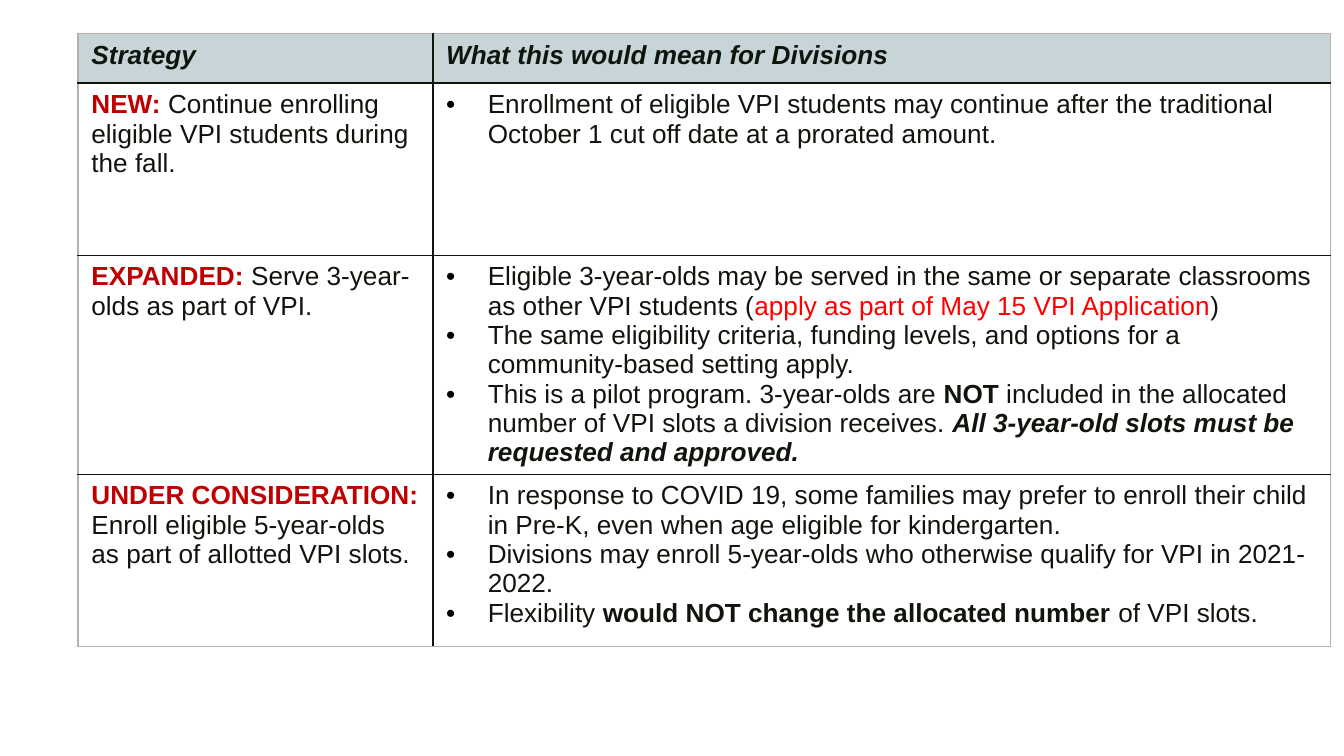
from lxml import etree
from pptx import Presentation
from pptx.dml.color import RGBColor
from pptx.oxml.ns import qn
from pptx.util import Inches, Pt

COLORS = {"ink": "0F150D", "label": "C00000", "alert": "FF0000", "header": "C7D4D8",
          "body": "FFFFFF", "bullet": "000000", "outline": "B2B2B2"}

# Each run is (text, style); style words: bold, italic, or a colour name
HEADINGS = ["Strategy", "What this would mean for Divisions"]
STRATEGIES = [
    ("NEW: ", "Continue enrolling eligible VPI students during the fall.", [
        [("Enrollment of eligible VPI students may continue after the traditional "
          "October 1 cut off date at a prorated amount.", "")],
    ]),
    ("EXPANDED: ", "Serve 3-year-olds as part of VPI.", [
        [("Eligible 3-year-olds may be served in the same or separate classrooms "
          "as other VPI students (", ""),
         ("apply as part of May 15 VPI Application", "alert"), (")", "")],
        [("The same eligibility criteria, funding levels, and options for a "
          "community-based setting apply.", "")],
        [("This is a pilot program. 3-year-olds are ", ""), ("NOT", "bold"),
         (" included in the allocated number of VPI slots a division receives. ", ""),
         ("All 3-year-old slots must be requested and approved.", "bold italic")],
    ]),
    ("UNDER CONSIDERATION: ", "Enroll eligible 5-year-olds as part of allotted VPI slots.", [
        [("In response to COVID 19, some families may prefer to enroll their child "
          "in Pre-K, even when age eligible for kindergarten.", "")],
        [("Divisions may enroll 5-year-olds who otherwise qualify for VPI in 2021-2022.", "")],
        [("Flexibility ", ""), ("would NOT change the allocated number ", "bold"),
         ("of VPI slots.", "")],
    ]),
]
COLUMN_WIDTHS = [2.64, 6.68]
ROW_HEIGHTS = [0.37] + [1.28] * len(STRATEGIES)
SLIDE_WIDTH = 10
LEFT, TOP, INDENT = 0.58, 0.25, 0.31


def add_bullet(paragraph):
    props = paragraph._p.get_or_add_pPr()
    props.set("marL", str(Inches(INDENT)))
    props.set("indent", str(-Inches(INDENT)))
    color = etree.SubElement(props, qn("a:buClr"))
    etree.SubElement(color, qn("a:srgbClr"), val=COLORS["bullet"])
    etree.SubElement(props, qn("a:buFont"), typeface="Arial")
    etree.SubElement(props, qn("a:buChar"), char="•")


def fill_cell(cell, paragraphs, background, bulleted=False):
    cell.fill.solid()
    cell.fill.fore_color.rgb = RGBColor.from_string(COLORS[background])
    frame = cell.text_frame
    for i, runs in enumerate(paragraphs):
        paragraph = frame.paragraphs[0] if i == 0 else frame.add_paragraph()
        if bulleted:
            add_bullet(paragraph)
        paragraph.font.size = Pt(14)
        paragraph.font.name = "Arial"
        for content, style in runs:
            run = paragraph.add_run()
            run.text = content
            words = style.split()
            font = run.font
            font.size, font.name = Pt(14), "Arial"
            font.bold, font.italic = "bold" in words, "italic" in words
            ink = next((w for w in words if w in COLORS), "ink")
            font.color.rgb = RGBColor.from_string(COLORS[ink])


def set_borders(cell, outer_sides):
    props = cell._tc.get_or_add_tcPr()
    for i, side in enumerate("LRTB"):
        line = etree.Element(qn(f"a:ln{side}"), w=str(Pt(1)))
        fill = etree.SubElement(line, qn("a:solidFill"))
        color = COLORS["outline" if side in outer_sides else "ink"]
        etree.SubElement(fill, qn("a:srgbClr"), val=color)
        props.insert(i, line)


# Widescreen 16:9 slide
prs = Presentation()
prs.slide_width = Inches(SLIDE_WIDTH)
prs.slide_height = Inches(SLIDE_WIDTH * 9 / 16)
slide = prs.slides.add_slide(prs.slide_layouts[6])

# Table grid
table = slide.shapes.add_table(
    len(ROW_HEIGHTS), len(COLUMN_WIDTHS), Inches(LEFT), Inches(TOP),
    Inches(sum(COLUMN_WIDTHS)), Inches(sum(ROW_HEIGHTS))).table
for column, width in zip(table.columns, COLUMN_WIDTHS):
    column.width = Inches(width)
for row, height in zip(table.rows, ROW_HEIGHTS):
    row.height = Inches(height)

# Header row, then one row per strategy
for c, heading in enumerate(HEADINGS):
    fill_cell(table.cell(0, c), [[(heading, "bold italic")]], "header")
for r, (label, summary, effects) in enumerate(STRATEGIES, start=1):
    fill_cell(table.cell(r, 0), [[(label, "bold label"), (summary, "")]], "body")
    fill_cell(table.cell(r, 1), effects, "body", bulleted=True)

# Dark inner rules, grey outline
last_row = len(ROW_HEIGHTS) - 1
for r in range(len(ROW_HEIGHTS)):
    for c in range(len(COLUMN_WIDTHS)):
        outer = "LR"[c] + {0: "T", last_row: "B"}.get(r, "")
        set_borders(table.cell(r, c), outer)

prs.save("out.pptx")
